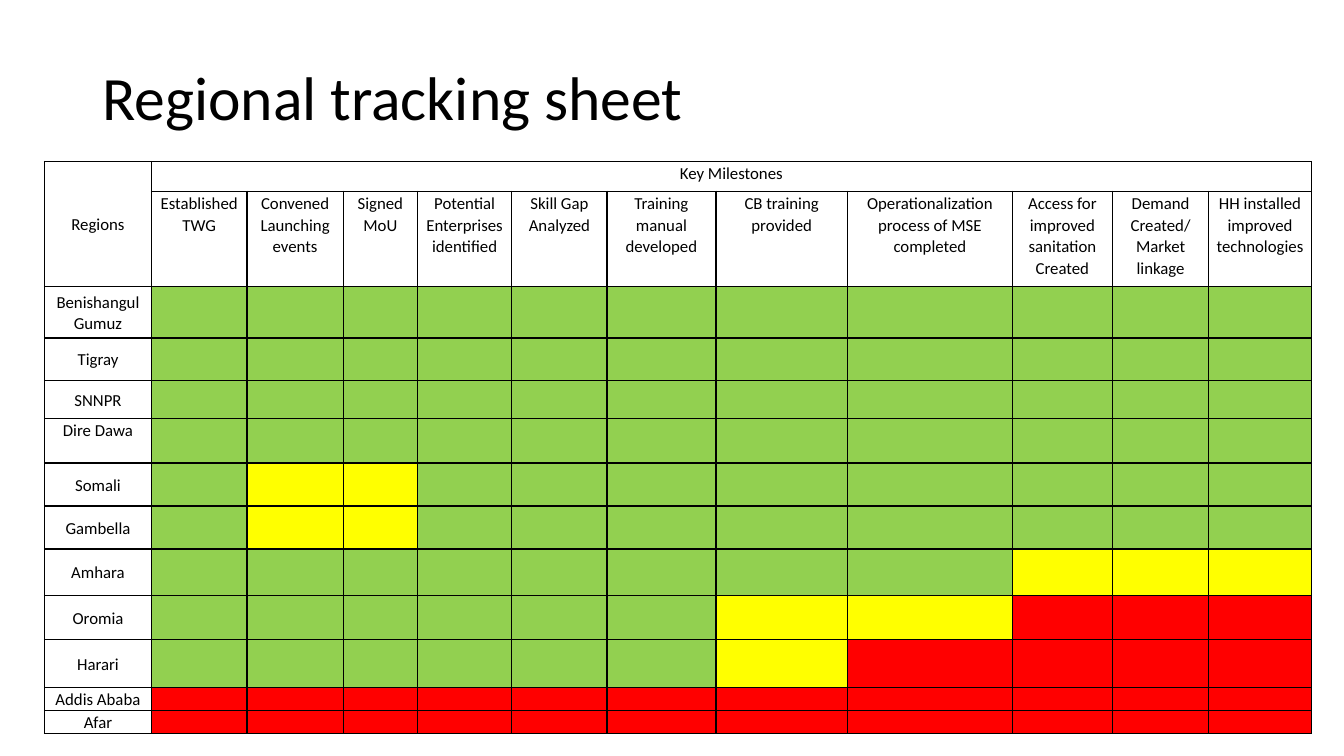
from lxml import etree
from pptx import Presentation
from pptx.dml.color import RGBColor
from pptx.enum.text import MSO_ANCHOR, PP_ALIGN
from pptx.oxml.ns import qn
from pptx.util import Pt

TOP, MIDDLE = MSO_ANCHOR.TOP, MSO_ANCHOR.MIDDLE
CENTER = PP_ALIGN.CENTER
COLORS = {
    "text": "000000",
    "border": "000000",
    "blank": "FFFFFF",
    "G": "92D050",
    "Y": "FFFF00",
    "R": "FF0000",
}
FONT = "Calibri"
CELL_SIZE = 12
CELL_FORMAT = {
    "margin_left": Pt(0.75),
    "margin_right": Pt(0.75),
    "margin_top": Pt(0.75),
    "margin_bottom": Pt(0),
}
TITLE_BOX = (66, 28.75, 828, 86.5)
TRACKING_BOX = (31.8, 115.3, 905, 408)
COLUMN_WIDTHS = [76.4, 68.2, 68.9, 52.9, 67.5, 67.9, 77.9, 93.9, 117.9, 71.4, 68.9, 73.2]
HEADER_HEIGHTS = [21.3, 68]
MILESTONES = [
    "Established TWG",
    "Convened Launching events",
    "Signed MoU",
    "Potential Enterprises identified",
    "Skill Gap Analyzed",
    "Training manual developed",
    "CB training provided",
    "Operationalization process of MSE completed",
    "Access for improved sanitation Created",
    "Demand Created/ Market linkage",
    "HH installed\nimproved technologies",
]
REGIONS = [
    ("Benishangul Gumuz", 36.8, MIDDLE, "GGGGGGGGGGG"),
    ("Tigray", 30.2, MIDDLE, "GGGGGGGGGGG"),
    ("SNNPR", 27.6, MIDDLE, "GGGGGGGGGGG"),
    ("Dire Dawa", 31.6, TOP, "GGGGGGGGGGG"),
    ("Somali", 30.7, MIDDLE, "GYYGGGGGGGG"),
    ("Gambella", 30.7, MIDDLE, "GYYGGGGGGGG"),
    ("Amhara", 33, MIDDLE, "GGGGGGGGYYY"),
    ("Oromia", 31.6, MIDDLE, "GGGGGGYYRRR"),
    ("Harari", 34.2, MIDDLE, "GGGGGGYRRRR"),
    ("Addis Ababa", 16.4, MIDDLE, "RRRRRRRRRRR"),
    ("Afar", 16.4, MIDDLE, "RRRRRRRRRRR"),
]


def apply_format(target, values):
    """Set every attribute named in values on the target."""
    for name, value in values.items():
        setattr(target, name, value)


def style_font(font, size):
    """Give a font the slide's typeface and text colour."""
    apply_format(font, {"name": FONT, "size": Pt(size)})
    font.color.rgb = RGBColor.from_string(COLORS["text"])


def add_borders(cell):
    """Draw a thin line on all four sides of a cell."""
    properties = cell._tc.get_or_add_tcPr()
    for position, side in enumerate(("a:lnL", "a:lnR", "a:lnT", "a:lnB")):
        line = etree.Element(qn(side), w=str(Pt(1)))
        fill = etree.SubElement(line, qn("a:solidFill"))
        etree.SubElement(fill, qn("a:srgbClr"), val=COLORS["border"])
        properties.insert(position, line)


def fill_cell(cell, color, text="", anchor=TOP):
    """Colour, border and label one table cell."""
    apply_format(cell, {**CELL_FORMAT, "vertical_anchor": anchor})
    cell.fill.solid()
    cell.fill.fore_color.rgb = RGBColor.from_string(COLORS[color])
    add_borders(cell)
    cell.text_frame.text = text
    for paragraph in cell.text_frame.paragraphs:
        apply_format(paragraph, {"alignment": CENTER, "line_spacing": 1.06})
        for run in paragraph.runs:
            style_font(run.font, CELL_SIZE)
        if not text:
            etree.SubElement(paragraph._p, qn("a:endParaRPr"), sz=str(CELL_SIZE * 100))


def add_title(slide, box):
    """Place the slide title inside the box."""
    frame = slide.shapes.add_textbox(*map(Pt, box)).text_frame
    apply_format(frame, {"word_wrap": True, "vertical_anchor": MIDDLE})
    paragraph = frame.paragraphs[0]
    paragraph.line_spacing = 0.9
    run = paragraph.add_run()
    run.text = "Regional tracking sheet"
    style_font(run.font, 44)


def add_tracking_table(slide, box):
    """Place the table of regions by milestones inside the box."""
    heights = HEADER_HEIGHTS + [height for _, height, _, _ in REGIONS]
    table = slide.shapes.add_table(len(heights), len(COLUMN_WIDTHS), *map(Pt, box)).table
    apply_format(table, {"first_row": False, "horz_banding": False})
    for column, width in zip(table.columns, COLUMN_WIDTHS):
        column.width = Pt(width)
    for row, height in zip(table.rows, heights):
        row.height = Pt(height)

    table.cell(0, 0).merge(table.cell(1, 0))
    table.cell(0, 1).merge(table.cell(0, len(MILESTONES)))
    fill_cell(table.cell(0, 0), "blank", "Regions", MIDDLE)
    fill_cell(table.cell(1, 0), "blank")
    for column, milestone in enumerate(MILESTONES, 1):
        fill_cell(table.cell(0, column), "blank", "Key Milestones" if column == 1 else "")
        fill_cell(table.cell(1, column), "blank", milestone)
    for row, (region, _, anchor, statuses) in enumerate(REGIONS, len(HEADER_HEIGHTS)):
        fill_cell(table.cell(row, 0), "blank", region, anchor)
        for column, status in enumerate(statuses, 1):
            fill_cell(table.cell(row, column), status)


def main():
    """Build and save the presentation."""
    presentation = Presentation()
    apply_format(presentation, {"slide_width": Pt(960), "slide_height": Pt(540)})
    slide = presentation.slides.add_slide(presentation.slide_layouts[6])
    add_title(slide, TITLE_BOX)
    add_tracking_table(slide, TRACKING_BOX)
    presentation.save("out.pptx")


if __name__ == "__main__":
    main()
